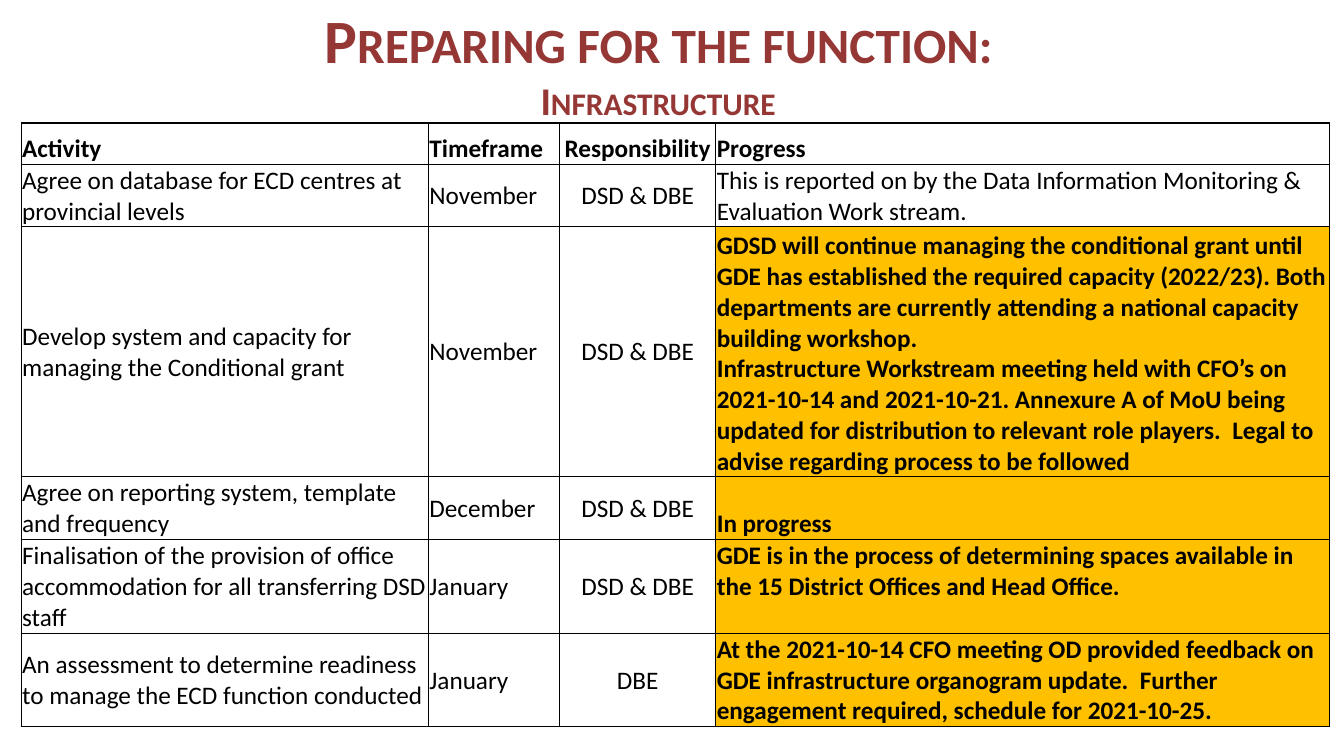
from lxml import etree
from pptx import Presentation, util as u
from pptx.dml.color import RGBColor
from pptx.enum import text
from pptx.oxml.ns import qn

HEADING = [("Preparing for the function:", 44), ("Infrastructure", 28)]
HEADERS = ("Activity", "Timeframe", "Responsibility", "Progress")
ACTIVITIES = [
    ("Agree on database for ECD centres at provincial levels", "November", "DSD & DBE",
     "This is reported on by the Data Information Monitoring & Evaluation Work stream."),
    ("Develop system and capacity for managing the Conditional grant", "November", "DSD & DBE",
     "GDSD will continue managing the conditional grant until GDE has established the required "
     "capacity (2022/23). Both departments are currently attending a national capacity building "
     "workshop.\n"
     "Infrastructure Workstream meeting held with CFO’s on 2021-10-14 and 2021-10-21. Annexure A "
     "of MoU being updated for distribution to relevant role players.  Legal to advise regarding "
     "process to be followed"),
    ("Agree on reporting system, template and frequency", "December", "DSD & DBE",
     "In progress"),
    ("Finalisation of the provision of office accommodation for all transferring DSD staff",
     "January", "DSD & DBE",
     "GDE is in the process of determining spaces available in the 15 District Offices and "
     "Head Office."),
    ("An assessment to determine readiness to manage the ECD function conducted", "January", "DBE",
     "At the 2021-10-14 CFO meeting OD provided feedback on GDE infrastructure organogram "
     "update.  Further engagement required, schedule for 2021-10-25."),
]
TOP, MIDDLE, BOTTOM = (text.MSO_ANCHOR.TOP, text.MSO_ANCHOR.MIDDLE, text.MSO_ANCHOR.BOTTOM)
PROGRESS_ANCHORS = (BOTTOM, BOTTOM, BOTTOM, BOTTOM, TOP, MIDDLE)
COLUMN_WIDTHS = (4.04, 1.3, 1.55, 6.09)
LINES = (2, 8, 2, 3, 3)
HEADER_HEIGHT, LINE_HEIGHT = 0.41, 0.31
RESPONSIBILITY, PROGRESS = 2, 3
FIRST_HIGHLIGHT = 2
COLORS = {"heading": "953735", "ink": "000000", "plain": "FFFFFF", "highlight": "FFC000"}
FONT = "Calibri"


def color(name):
    return RGBColor.from_string(COLORS[name])


def style(paragraph, size, ink, bold, centred):
    paragraph.alignment = text.PP_ALIGN.CENTER if centred else text.PP_ALIGN.LEFT
    for run in paragraph.runs:
        run.font.name, run.font.size, run.font.bold = FONT, u.Pt(size), bold
        run.font.color.rgb = color(ink)


def add_borders(cell):
    properties = cell._tc.get_or_add_tcPr()
    for position, side in enumerate(("lnL", "lnR", "lnT", "lnB")):
        border = etree.Element(qn("a:" + side), w=str(u.Pt(1)))
        fill = etree.SubElement(border, qn("a:solidFill"))
        etree.SubElement(fill, qn("a:srgbClr"), val=COLORS["ink"])
        properties.insert(position, border)


def add_heading(slide):
    title = slide.shapes.title
    title.left, title.top, title.width, title.height = map(u.Inches, (1.67, 0.13, 9.72, 0.98))
    frame = title.text_frame
    frame.text = "\n".join(line for line, size in HEADING)
    frame.auto_size = text.MSO_AUTO_SIZE.NONE
    frame.vertical_anchor = MIDDLE
    for paragraph, (line, size) in zip(frame.paragraphs, HEADING):
        paragraph.space_before = u.Pt(0)
        style(paragraph, size, "heading", True, True)
        for run in paragraph.runs:
            run.font._element.set("cap", "small")


def add_plan(slide):
    rows = [HEADERS] + ACTIVITIES
    heights = [HEADER_HEIGHT] + [LINE_HEIGHT * count for count in LINES]
    plan = slide.shapes.add_table(
        len(rows), len(HEADERS), u.Inches(0.21), u.Inches(1.22),
        u.Inches(sum(COLUMN_WIDTHS)), u.Inches(sum(heights))).table
    for column, width in zip(plan.columns, COLUMN_WIDTHS):
        column.width = u.Inches(width)
    for r, (row, height) in enumerate(zip(rows, heights)):
        plan.rows[r].height = u.Inches(height)
        for c, words in enumerate(row):
            cell = plan.cell(r, c)
            highlighted = c == PROGRESS and r >= FIRST_HIGHLIGHT
            cell.text_frame.text = words
            cell.margin_left = cell.margin_right = cell.margin_top = u.Inches(0.01)
            cell.margin_bottom = 0
            if c == PROGRESS:
                cell.vertical_anchor = PROGRESS_ANCHORS[r]
            else:
                cell.vertical_anchor = MIDDLE if r else BOTTOM
            cell.fill.solid()
            cell.fill.fore_color.rgb = color("highlight" if highlighted else "plain")
            for paragraph in cell.text_frame.paragraphs:
                style(paragraph, 18, "ink", r == 0 or highlighted, c == RESPONSIBILITY)
            add_borders(cell)


def main():
    deck = Presentation()
    deck.slide_width, deck.slide_height = u.Inches(13.33), u.Inches(7.5)
    slide = deck.slides.add_slide(deck.slide_layouts[5])
    add_heading(slide)
    add_plan(slide)
    deck.save("out.pptx")


if __name__ == "__main__":
    main()
